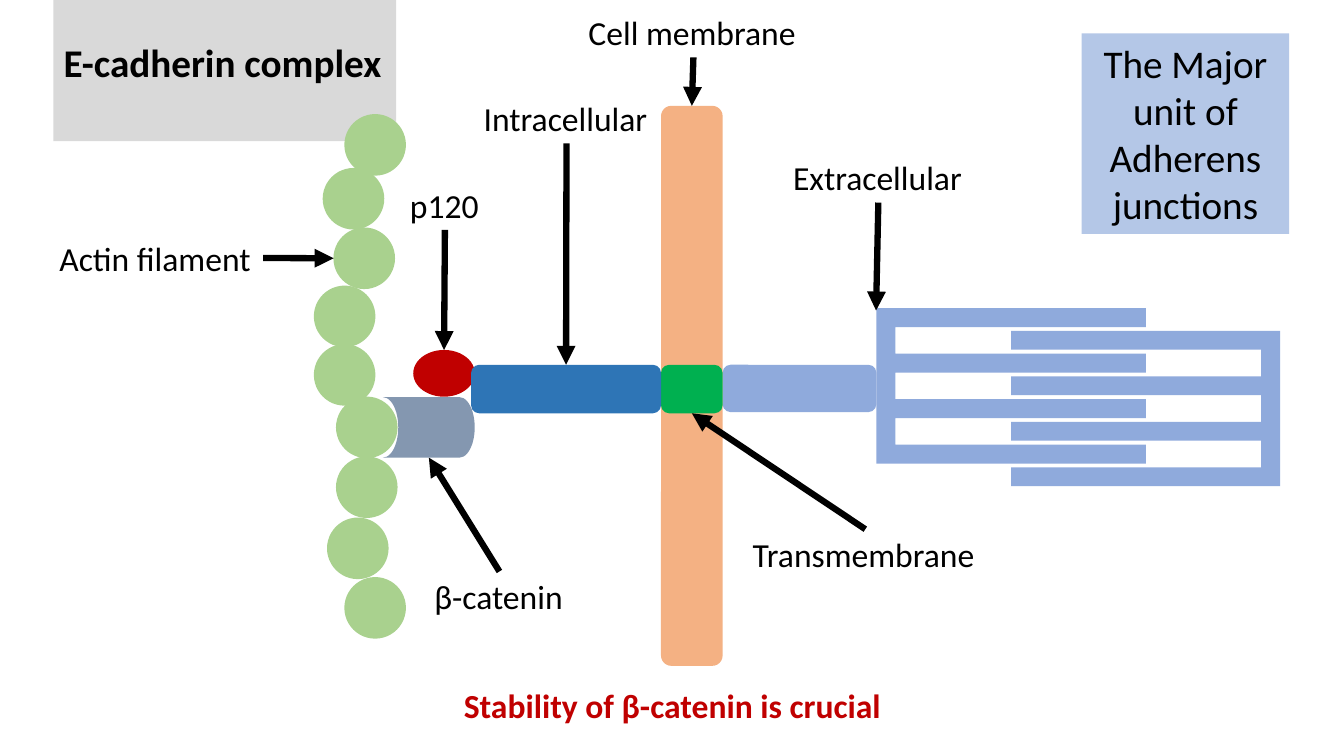
import pptx
import pptx.util
import pptx.dml.color
import pptx.enum.shapes
import pptx.enum.text
import pptx.oxml.ns
from lxml import etree

Pt = pptx.util.Pt
RGB = pptx.dml.color.RGBColor
SHAPE = pptx.enum.shapes.MSO_SHAPE
ALIGN = pptx.enum.text.PP_ALIGN
ANCHOR = pptx.enum.text.MSO_ANCHOR
AUTO = pptx.enum.text.MSO_AUTO_SIZE
qn = pptx.oxml.ns.qn

BLACK = RGB(0x00, 0x00, 0x00)
GREY = RGB(0xD9, 0xD9, 0xD9)
SLATE = RGB(0x84, 0x97, 0xB0)
RED = RGB(0xC0, 0x00, 0x00)
PERIWINKLE = RGB(0x8F, 0xAA, 0xDC)
PALE_BLUE = RGB(0xB4, 0xC7, 0xE7)
PEACH = RGB(0xF4, 0xB1, 0x83)
GREEN = RGB(0x00, 0xB0, 0x50)
BLUE = RGB(0x2E, 0x75, 0xB6)
LEAF = RGB(0xA9, 0xD1, 0x8E)

TOP, LEFT, BOTTOM, RIGHT = range(4)


class Diagram:
    font = "Calibri"
    arrow_width = 4.5

    def __init__(self, slide):
        self.s = slide

    def paint(self, sp, color):
        sp.shadow.inherit = False
        sp.fill.solid()
        sp.fill.fore_color.rgb = color
        sp.line.fill.background()
        return sp

    def add_text(self, sp, text, size, color=BLACK, bold=False,
                 align=ALIGN.LEFT, anchor=ANCHOR.TOP, wrap=False):
        tf = sp.text_frame
        tf.word_wrap = wrap
        tf.auto_size = AUTO.SHAPE_TO_FIT_TEXT
        tf.vertical_anchor = anchor
        p = tf.paragraphs[0]
        p.alignment = align
        r = p.add_run()
        r.text = text
        r.font.name = self.font
        r.font.size = Pt(size)
        r.font.bold = bold
        r.font.color.rgb = color
        return sp

    def title(self, text, x, y, w, h, color):
        sp = self.s.shapes.title
        sp.left, sp.top, sp.width, sp.height = Pt(x), Pt(y), Pt(w), Pt(h)
        sp.fill.solid()
        sp.fill.fore_color.rgb = color
        return self.add_text(sp, text, 28, bold=True, anchor=ANCHOR.MIDDLE)

    def shape(self, kind, x, y, w, h, color):
        sp = self.s.shapes.add_shape(kind, Pt(x), Pt(y), Pt(w), Pt(h))
        return self.paint(sp, color)

    def label(self, text, x, y, w, **style):
        sp = self.s.shapes.add_textbox(Pt(x), Pt(y), Pt(w), Pt(36))
        return self.add_text(sp, text, 24, **style)

    def comb(self, back, tip, top, color, teeth=4, pitch=32.5, bar=13.5):
        """Spine at back, with teeth reaching to tip."""
        inner = back + bar if tip > back else back - bar
        points = [(back, top)]
        for i in range(teeth):
            y = top + i * pitch
            if i:
                points.append((inner, y))
            points += [(tip, y), (tip, y + bar)]
            if i < teeth - 1:
                points.append((inner, y + bar))
        points.append((back, top + (teeth - 1) * pitch + bar))
        points = [(Pt(x), Pt(y)) for x, y in points]
        builder = self.s.shapes.build_freeform(*points[0])
        builder.add_line_segments(points[1:], close=True)
        return self.paint(builder.convert_to_shape(), color)

    def arrow(self, source, side, target=None, target_side=TOP, point=(0, 0)):
        x, y = point
        c = self.s.shapes.add_connector(
            pptx.enum.shapes.MSO_CONNECTOR.STRAIGHT, 0, 0, Pt(x), Pt(y))
        c.begin_connect(source, side)
        if target is not None:
            c.end_connect(target, target_side)
        c.line.width = Pt(self.arrow_width)
        c.line.color.rgb = BLACK
        spPr = c.element.spPr
        etree.SubElement(spPr.find(qn("a:ln")), qn("a:tailEnd"), type="triangle")
        etree.SubElement(spPr, qn("a:effectLst"))


def main():
    prs = pptx.Presentation()
    prs.slide_width, prs.slide_height = Pt(960), Pt(540)
    d = Diagram(prs.slides.add_slide(prs.slide_layouts[5]))

    # Heading
    d.title("E-cadherin complex", 38.2, 23.8, 244.8, 41.2, GREY)

    # Catenins
    beta = d.shape(SHAPE.FLOWCHART_STORED_DATA, 273.6, 283.7, 65.5, 43.2, SLATE)
    beta.element.spPr.find(qn("a:xfrm")).set("flipH", "1")
    p120 = d.shape(SHAPE.OVAL, 295.2, 250, 44, 33.4, RED)

    # Extracellular domains
    d.comb(914.4, 722.2, 236.3, PERIWINKLE)
    d.comb(626, 818.5, 220.2, PERIWINKLE)
    d.shape(SHAPE.ROUNDED_RECTANGLE, 516.2, 260.6, 109.8, 33.8, PERIWINKLE)

    # Membrane and the domains inside it
    membrane = d.shape(SHAPE.ROUNDED_RECTANGLE, 472.2, 75.6, 44, 400, PEACH)
    trans = d.shape(SHAPE.ROUNDED_RECTANGLE, 472.2, 260.6, 44, 34.6, GREEN)
    intra = d.shape(SHAPE.ROUNDED_RECTANGLE, 336.5, 260.6, 135.7, 34.6, BLUE)

    # Actin filament, by bead centres
    bead = 44
    for x, y in [(268, 103.5), (252.5, 142), (260.2, 184.5), (246.2, 226),
                 (246.2, 267.8), (262, 305.3), (262, 348), (255.6, 391.7),
                 (268, 434.2)]:
        d.shape(SHAPE.OVAL, x - bead / 2, y - bead / 2, bead, bead, LEAF)

    # Labels and their arrows
    d.arrow(d.label("Extracellular", 559.4, 108.7, 136), BOTTOM, point=(625.8, 221.8))
    d.arrow(d.label("Transmembrane", 530.6, 378, 175), TOP, trans, BOTTOM)
    d.arrow(d.label("Intracellular", 338.4, 66.5, 132.5), BOTTOM, intra)
    d.arrow(d.label("Cell membrane", 413.3, 5, 164), BOTTOM, membrane)
    d.arrow(d.label("p120", 285.8, 128.2, 64), BOTTOM, p120)
    d.arrow(d.label("β-catenin", 303.1, 408.2, 107.3), TOP, beta, BOTTOM)
    d.arrow(d.label("Actin filament", 35.3, 166.3, 152.6), RIGHT, point=(238.3, 184.5))

    # Takeaways
    d.label("Stability of β-catenin is crucial", 322.6, 486, 315.4,
            color=RED, bold=True, align=ALIGN.CENTER)
    note = d.shape(SHAPE.RECTANGLE, 772.6, 23.8, 148.3, 143.3, PALE_BLUE)
    d.add_text(note, "The Major unit of Adherens junctions", 28,
               align=ALIGN.CENTER, anchor=ANCHOR.MIDDLE, wrap=True)

    prs.save("out.pptx")


if __name__ == "__main__":
    main()
